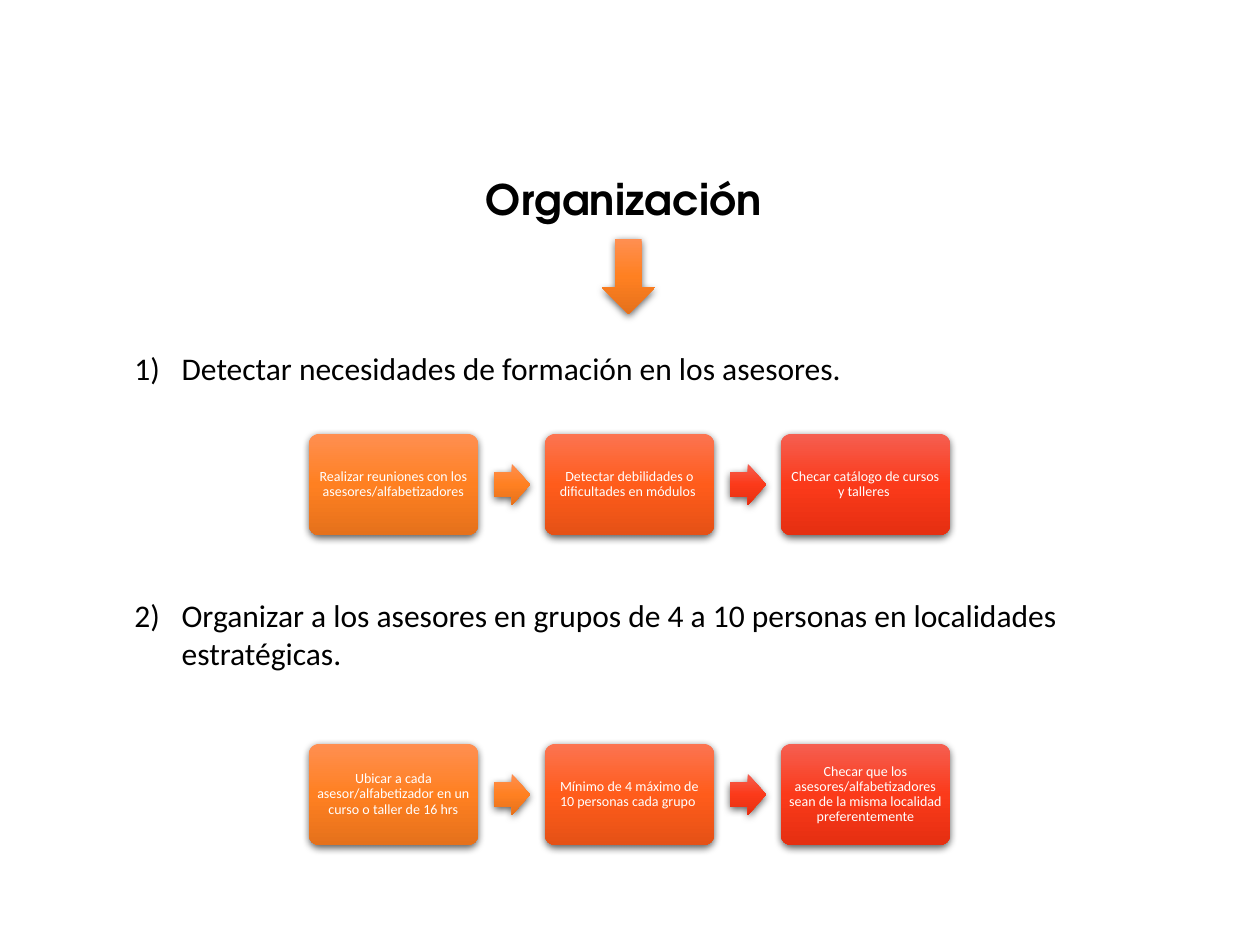
from lxml import etree
from pptx import Presentation
from pptx.dml.color import RGBColor
from pptx.enum.shapes import MSO_SHAPE
from pptx.enum.text import MSO_ANCHOR, MSO_AUTO_SIZE, PP_ALIGN
from pptx.oxml import parse_xml
from pptx.oxml.ns import qn
from pptx.util import Pt

ROUND = MSO_SHAPE.ROUNDED_RECTANGLE
RIGHT = MSO_SHAPE.RIGHT_ARROW
DOWN = MSO_SHAPE.DOWN_ARROW
MIDDLE = MSO_ANCHOR.MIDDLE
CENTER = PP_ALIGN.CENTER
NO_FIT = MSO_AUTO_SIZE.NONE
NS = "http://schemas.openxmlformats.org/drawingml/2006/main"
SCALE = 914400 / 126  # EMU per px

ORANGE = ("FF8F51", "FF8021", "E5711B")
CORAL = ("FC7451", "FF5C1B", "E55116")
RED = ("F55F51", "FB3A1A", "E52F11")

TITLE = {"name": "TeX Gyre Adventor", "size": Pt(24), "bold": True}
BODY = {"name": "Calibri", "size": Pt(18)}
LABEL = {"name": "Calibri", "size": Pt(8)}


def write(para, text, style, color):
    para.text = text
    for key, value in style.items():
        setattr(para.runs[0].font, key, value)
    para.runs[0].font.color.rgb = RGBColor.from_string(color)


def draw(kind, box, tones, adjust=()):
    shape = slide.shapes.add_shape(kind, *[round(v * SCALE) for v in box])
    for i, value in enumerate(adjust):
        shape.adjustments[i] = value
    stops = "".join(f'<a:gs pos="{i * 50000}"><a:srgbClr val="{tone}"/></a:gs>'
                    for i, tone in enumerate(tones))
    props = shape._element.spPr
    props.append(parse_xml(f'<a:gradFill xmlns:a="{NS}" rotWithShape="1"><a:gsLst>{stops}'
                           '</a:gsLst><a:lin ang="5400000" scaled="0"/></a:gradFill>'))
    shape.line.fill.background()
    props.append(parse_xml(
        f'<a:effectLst xmlns:a="{NS}"><a:outerShdw blurRad="57150" dist="19050" dir="5400000" '
        'algn="ctr" rotWithShape="0"><a:srgbClr val="000000"><a:alpha val="63000"/>'
        '</a:srgbClr></a:outerShdw></a:effectLst>'))
    return shape


prs = Presentation()
prs.slide_width = round(1260 * SCALE)
prs.slide_height = round(945 * SCALE)
slide = prs.slides.add_slide(prs.slide_layouts[5])

# Title and the arrow below it
title = slide.shapes.title
title.left, title.top, title.width, title.height = [
    round(v * SCALE) for v in (422, 165, 415, 73)]
frame = title.text_frame
frame.auto_size = NO_FIT
frame.vertical_anchor = MIDDLE
para = frame.paragraphs[0]
para.alignment = CENTER
para.line_spacing = 0.9
write(para, "Organización ", TITLE, "000000")
draw(DOWN, (602, 239, 53, 75), ORANGE)

# Each numbered step: text top, row top, sentence, box labels
steps = [
    (343, 434, "Detectar necesidades de formación en los asesores.",
     ["Realizar reuniones con los asesores/alfabetizadores",
      "Detectar debilidades o dificultades en módulos ",
      "Checar catálogo de cursos y talleres "]),
    (590, 744, "Organizar a los asesores en grupos de 4 a 10 personas en localidades estratégicas.",
     ["Ubicar a cada asesor/alfabetizador en un curso o taller de 16 hrs",
      "Mínimo de 4 máximo de 10 personas cada grupo ",
      "Checar que los asesores/alfabetizadores sean de la misma localidad preferentemente"]),
]
for num, (top, row, text, labels) in enumerate(steps, 1):
    # Numbered sentence
    box = slide.shapes.add_textbox(*[round(v * SCALE) for v in (122, top, 1014, 127)])
    box.text_frame.word_wrap = True
    para = box.text_frame.paragraphs[0]
    props = para._p.get_or_add_pPr()
    props.set("marL", "342900")
    props.set("indent", "-342900")
    etree.SubElement(props, qn("a:buFont"), typeface="+mj-lt")
    etree.SubElement(props, qn("a:buAutoNum"), type="arabicParenR", startAt=str(num))
    write(para, text, BODY, "000000")

    # Row of boxes
    for col, (label, tones) in enumerate(zip(labels, (ORANGE, CORAL, RED))):
        card = draw(ROUND, (309 + 236 * col, row, 169, 101), tones, [0.1])
        frame = card.text_frame
        frame.word_wrap = True
        frame.vertical_anchor = MIDDLE
        for side in ("left", "top", "right", "bottom"):
            setattr(frame, f"margin_{side}", round(4 * SCALE))
        para = frame.paragraphs[0]
        para.alignment = CENTER
        para.line_spacing = 0.9
        write(para, label, LABEL, "FFFFFF")

    # Arrows between the boxes
    for col, tones in enumerate((ORANGE, RED)):
        draw(RIGHT, (494 + 236 * col, row + 30, 36, 41), tones, [0.6, 0.5])

prs.save("out.pptx")
